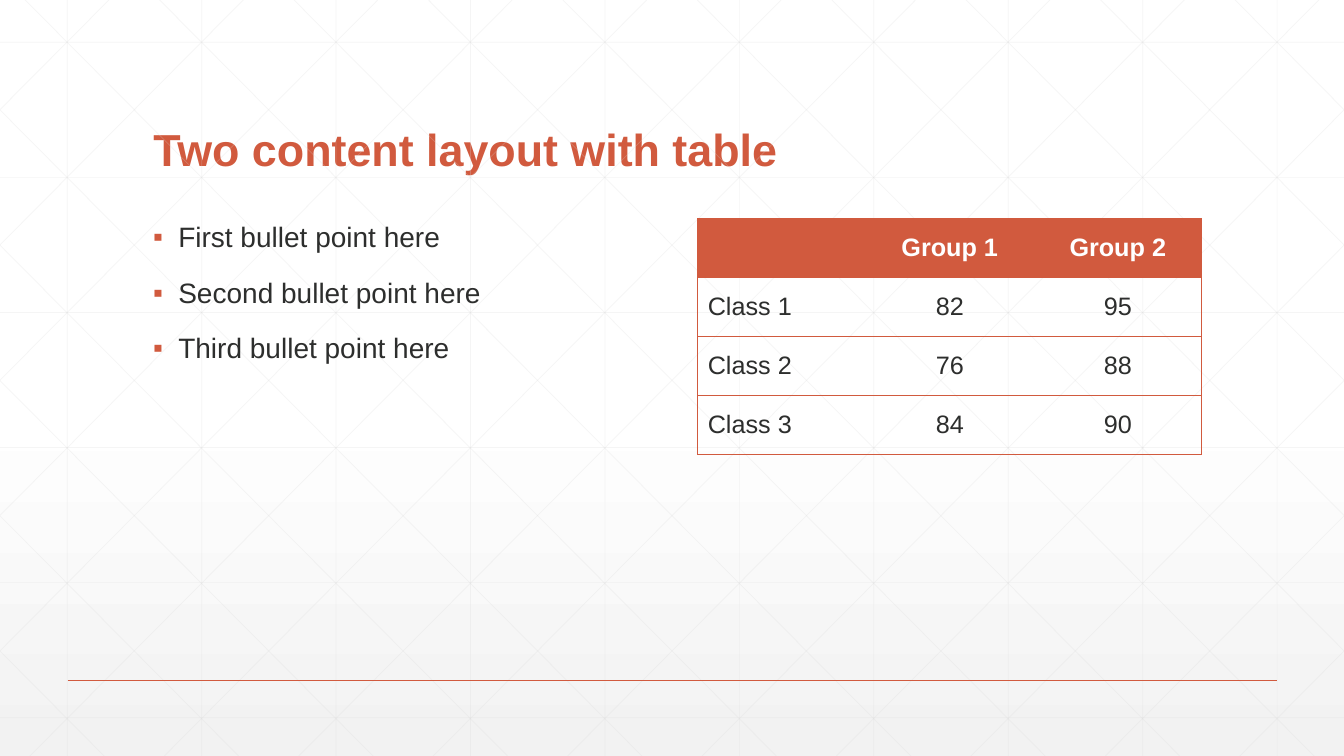
import dataclasses

import lxml.etree
import pptx
import pptx.dml.color
import pptx.enum.shapes
import pptx.enum.text
import pptx.oxml
import pptx.oxml.ns
import pptx.util

Inches = pptx.util.Inches
Align = pptx.enum.text.PP_ALIGN
Anchor = pptx.enum.text.MSO_ANCHOR
qn = pptx.oxml.ns.qn


@dataclasses.dataclass(frozen=True)
class Theme:
    """Colours, font and sizes of the slide."""
    accent: str = "D15A3E"
    ink: str = "2D2E2D"
    white: str = "FFFFFF"
    shade: str = "F2F2F2"
    grid: str = "D9D9D9"
    font: str = "Arial"
    title: int = 32
    body: int = 20
    cell: int = 18


THEME = Theme()
WIDTH, HEIGHT = 13.33, 7.5
PLAIN = "{2D5ABB26-0587-4C30-8999-92F81FD0307C}"


def rgb(color):
    """Turn a hex string into a colour."""
    return pptx.dml.color.RGBColor.from_string(color)


def add(parent, tag, **attrs):
    """Append a drawing element with attributes."""
    node = lxml.etree.SubElement(parent, qn(tag))
    for name, value in attrs.items():
        node.set(name, str(value))
    return node


def write(para, text, size=THEME.body, color=THEME.ink, bold=False,
          align=Align.LEFT, leading=None, before=None):
    """Write formatted text into a paragraph."""
    para.alignment = align
    if leading:
        para.line_spacing = leading
    if before is not None:
        para.space_before = pptx.util.Pt(before)
    run = para.add_run()
    run.text = text
    run.font.name = THEME.font
    run.font.size = pptx.util.Pt(size)
    run.font.bold = bold
    run.font.color.rgb = rgb(color)


def draw_line(slide, start, end, color, width, alpha=None):
    """Draw a straight line between two points."""
    line = slide.shapes.add_connector(
        pptx.enum.shapes.MSO_CONNECTOR.STRAIGHT,
        *(Inches(value) for value in (*start, *end)))
    line.line.color.rgb = rgb(color)
    line.line.width = pptx.util.Pt(width)
    props = line._element.spPr
    if alpha:
        add(props.find(".//" + qn("a:srgbClr")), "a:alpha", val=alpha * 1000)
    add(props, "a:effectLst")


def paint_back(slide):
    """Fill the background from white down to grey."""
    fill = slide.background.fill
    fill.gradient()
    fill.gradient_angle = 270
    stops = fill._fill._gradFill.find(qn("a:gsLst"))
    for stop in list(stops):
        stops.remove(stop)
    for place, color in ((0, THEME.white), (53, THEME.white), (100, THEME.shade)):
        stop = add(stops, "a:gs", pos=place * 1000)
        add(stop, "a:srgbClr", val=color)


def draw_grid(slide, width, height):
    """Draw the faint grid and its diagonals across the slide."""
    step, row, run = 4 / 3, 1.34, 7.45
    lines = [((x, 0), (x, height)) for x in (2 / 3 + step * i for i in range(10))]
    lines += [((0, y), (width, y)) for y in (0.42 + row * i for i in range(6))]
    for i in range(-5, 10):
        left = 0.25 + step * i
        first, last = max(0, left), min(width, left + run)
        top, low = ((x - left) / run * height for x in (first, last))
        lines.append(((first, top), (last, low)))
        lines.append(((width - first, top), (width - last, low)))
    for start, end in lines:
        draw_line(slide, start, end, THEME.grid, 0.5, alpha=25)


def place_title(slide, box, text):
    """Place the slide title."""
    title = slide.shapes.title
    title.left, title.top, title.width, title.height = map(Inches, box)
    frame = title.text_frame
    frame.auto_size = pptx.enum.text.MSO_AUTO_SIZE.NONE
    frame.vertical_anchor = Anchor.BOTTOM
    write(frame.paragraphs[0], text, size=THEME.title, color=THEME.accent,
          bold=True, leading=0.9)


def place_list(slide, box, items):
    """Place a bulleted list."""
    frame = slide.shapes.add_textbox(*map(Inches, box)).text_frame
    frame.word_wrap = True
    for i, item in enumerate(items):
        para = frame.add_paragraph() if i else frame.paragraphs[0]
        write(para, item, leading=0.9, before=18 if i else 0)
        props = para._p.get_or_add_pPr()
        props.set("marL", str(Inches(0.25)))
        props.set("indent", str(Inches(-0.25)))
        add(add(props, "a:buClr"), "a:srgbClr", val=THEME.accent)
        add(props, "a:buFont", typeface=THEME.font)
        add(props, "a:buChar", char="▪")


def edge_cell(cell, sides):
    """Draw thin borders on the given sides of a cell."""
    props = cell._tc.get_or_add_tcPr()
    for i, side in enumerate(sides):
        line = pptx.oxml.parse_xml(
            f'<a:ln{side} xmlns:a="http://schemas.openxmlformats.org/'
            f'drawingml/2006/main" w="{pptx.util.Pt(0.5)}"><a:solidFill>'
            f'<a:srgbClr val="{THEME.accent}"/></a:solidFill></a:ln{side}>')
        props.insert(i, line)


def place_table(slide, box, rows):
    """Place a table with a filled header row."""
    count = len(rows[0])
    frame = slide.shapes.add_table(len(rows), count, *map(Inches, box))
    table = frame.table
    table.horz_banding = False
    table._tbl.tblPr.find(qn("a:tableStyleId")).text = PLAIN
    for r, row in enumerate(rows):
        for c, text in enumerate(row):
            cell = table.cell(r, c)
            cell.vertical_anchor = Anchor.MIDDLE
            if r:
                cell.fill.background()
            else:
                cell.fill.solid()
                cell.fill.fore_color.rgb = rgb(THEME.accent)
            sides = ("L" if c == 0 else "") + ("R" if c == count - 1 else "")
            edge_cell(cell, sides + "TB")
            if text:
                write(cell.text_frame.paragraphs[0], text, size=THEME.cell,
                      color=THEME.ink if r else THEME.white, bold=not r,
                      align=Align.CENTER if c else Align.LEFT)


def main():
    """Build and save the slide."""
    deck = pptx.Presentation()
    deck.slide_width, deck.slide_height = Inches(WIDTH), Inches(HEIGHT)
    slide = deck.slides.add_slide(deck.slide_layouts[5])
    paint_back(slide)
    draw_grid(slide, WIDTH, HEIGHT)
    draw_line(slide, (0.67, 6.75), (12.67, 6.75), THEME.accent, 1)
    place_title(slide, (1.42, 0.55, 10.5, 1.25), "Two content layout with table")
    place_list(slide, (1.42, 2.17, 5, 4.17),
               ["First bullet point here", "Second bullet point here",
                "Third bullet point here"])
    place_table(slide, (6.92, 2.17, 5, 2.34),
                [["", "Group 1", "Group 2"], ["Class 1", "82", "95"],
                 ["Class 2", "76", "88"], ["Class 3", "84", "90"]])
    deck.save("out.pptx")


if __name__ == "__main__":
    main()
